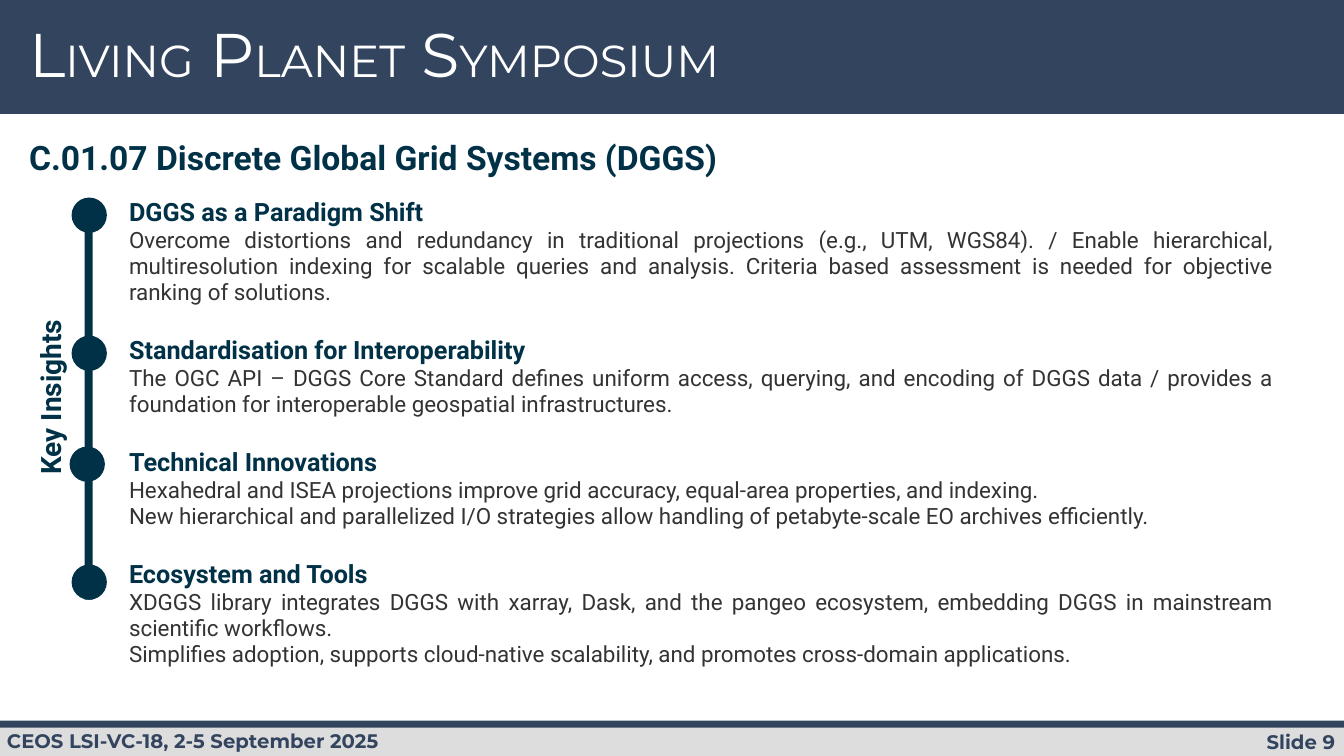
import pptx
import pptx.util
import pptx.dml.color
import pptx.enum.shapes
import pptx.enum.text
from dataclasses import dataclass
from typing import Any

SCALE = 9144  # EMU per px, 100 px to the inch
KIND = pptx.enum.shapes.MSO_SHAPE
ALIGN = pptx.enum.text.PP_ALIGN


@dataclass(frozen=True)
class Theme:
    navy: str = "33445F"
    teal: str = "003147"
    grey: str = "DDDDDD"
    body: str = "333333"
    white: str = "FFFFFF"
    brand: str = "Montserrat"
    plain: str = "Roboto"
    cap: int = 44
    small: int = 32
    topic: int = 24
    side: int = 20
    head: int = 18
    text: int = 16
    foot: int = 14


THEME = Theme()


@dataclass(frozen=True)
class Box:
    left: int
    top: int
    width: int
    height: int

    def emu(self) -> list[int]:
        return [px(n) for n in (self.left, self.top, self.width, self.height)]


@dataclass(frozen=True)
class Run:
    text: str
    size: int
    color: str
    font: str = THEME.plain
    bold: bool = True


@dataclass(frozen=True)
class Label:
    box: Box
    runs: list[Run]
    align: Any = ALIGN.LEFT
    turn: int = 0
    lead: float = 1.0


@dataclass(frozen=True)
class Block:
    box: Box
    color: str
    kind: Any = KIND.RECTANGLE


@dataclass(frozen=True)
class Insight:
    height: int
    head: str
    lines: list[str]


def px(n: int) -> int:
    return pptx.util.Emu(n * SCALE)


def rgb(code: str) -> pptx.dml.color.RGBColor:
    return pptx.dml.color.RGBColor.from_string(code)


def add_run(para: Any, run: Run) -> None:
    part = para.add_run()
    part.text = run.text
    font = part.font
    font.name, font.size, font.bold = run.font, pptx.util.Pt(run.size), run.bold
    font.color.rgb = rgb(run.color)


def add_block(slide: Any, block: Block) -> None:
    shape = slide.shapes.add_shape(block.kind, *block.box.emu())
    shape.shadow.inherit = False
    shape.fill.solid()
    shape.fill.fore_color.rgb = rgb(block.color)
    shape.line.fill.background()


def add_label(slide: Any, label: Label) -> None:
    shape = slide.shapes.add_textbox(*label.box.emu())
    shape.rotation = label.turn
    shape.text_frame.word_wrap = True
    para = shape.text_frame.paragraphs[0]
    para.alignment, para.line_spacing = label.align, label.lead
    for run in label.runs:
        add_run(para, run)


def add_table(slide: Any, box: Box, items: list[Insight]) -> None:
    table = slide.shapes.add_table(len(items), 1, *box.emu()).table
    table.first_row = table.horz_banding = False
    for row, item in zip(table.rows, items):
        row.height = px(item.height)
        cell = row.cells[0]
        cell.fill.solid()
        cell.fill.fore_color.rgb = rgb(THEME.white)
        cell.margin_left = cell.margin_right = px(15)
        cell.margin_top = cell.margin_bottom = px(15)
        runs = [Run(item.head, THEME.head, THEME.teal)]
        runs += [Run(line, THEME.text, THEME.body, bold=False) for line in item.lines]
        frame = cell.text_frame
        for i, run in enumerate(runs):
            para = frame.add_paragraph() if i else frame.paragraphs[0]
            para.alignment = ALIGN.JUSTIFY
            add_run(para, run)


BARS = [
    Block(Box(0, 0, 1333, 113), THEME.navy),
    Block(Box(0, 719, 1333, 31), THEME.grey),
    Block(Box(0, 715, 1333, 7), THEME.navy),
]

DOTS = [(71, 196), (71, 333), (69, 443), (71, 560)]
TRACK = [Block(Box(84, 213, 8, 382), THEME.teal)] + [
    Block(Box(left, top, 35, 35), THEME.teal, KIND.OVAL) for left, top in DOTS
]

TITLE = [
    Run(text, size, THEME.white, THEME.brand, False)
    for pair in (("L", "IVING"), (" P", "LANET"), (" S", "YMPOSIUM"))
    for text, size in zip(pair, (THEME.cap, THEME.small))
]


def foot(text: str) -> list[Run]:
    return [Run(text, THEME.foot, THEME.navy, THEME.brand)]


LABELS = [
    Label(Box(1123, 719, 211, 34), foot("Slide 9"), ALIGN.RIGHT),
    Label(Box(-3, 718, 643, 34), foot("CEOS LSI-VC-18, 2-5 September 2025")),
    Label(Box(19, 19, 1027, 85), TITLE, lead=0.9),
    Label(Box(-144, 372, 388, 44), [Run("Key Insights", THEME.side, THEME.teal)],
          ALIGN.CENTER, turn=270),
    Label(Box(19, 131, 805, 50),
          [Run("C.01.07 Discrete Global Grid Systems (DGGS)", THEME.topic, THEME.teal)]),
]

ITEMS = [
    Insight(137, "DGGS as a Paradigm Shift", [
        "Overcome distortions and redundancy in traditional projections (e.g., UTM, WGS84). "
        "/ Enable hierarchical, multiresolution indexing for scalable queries and analysis. "
        "Criteria based assessment is needed for objective ranking of solutions."]),
    Insight(111, "Standardisation for Interoperability", [
        "The OGC API – DGGS Core Standard defines uniform access, querying, and encoding of "
        "DGGS data / provides a foundation for interoperable geospatial infrastructures."]),
    Insight(111, "Technical Innovations", [
        "Hexahedral and ISEA projections improve grid accuracy, equal-area properties, "
        "and indexing.",
        "New hierarchical and parallelized I/O strategies allow handling of petabyte-scale "
        "EO archives efficiently."]),
    Insight(137, "Ecosystem and Tools", [
        "XDGGS library integrates DGGS with xarray, Dask, and the pangeo ecosystem, "
        "embedding DGGS in mainstream scientific workflows.",
        "Simplifies adoption, supports cloud-native scalability, and promotes "
        "cross-domain applications."]),
]


def main() -> None:
    deck = pptx.Presentation()
    deck.slide_width, deck.slide_height = px(1333), px(750)
    slide = deck.slides.add_slide(deck.slide_layouts[6])

    # Header and footer bars
    for bar in BARS:
        add_block(slide, bar)

    # Insights and their timeline
    add_table(slide, Box(113, 182, 1165, sum(item.height for item in ITEMS)), ITEMS)
    for block in TRACK:
        add_block(slide, block)

    # Title, headings and footer text
    for label in LABELS:
        add_label(slide, label)

    deck.save("out.pptx")


if __name__ == "__main__":
    main()
